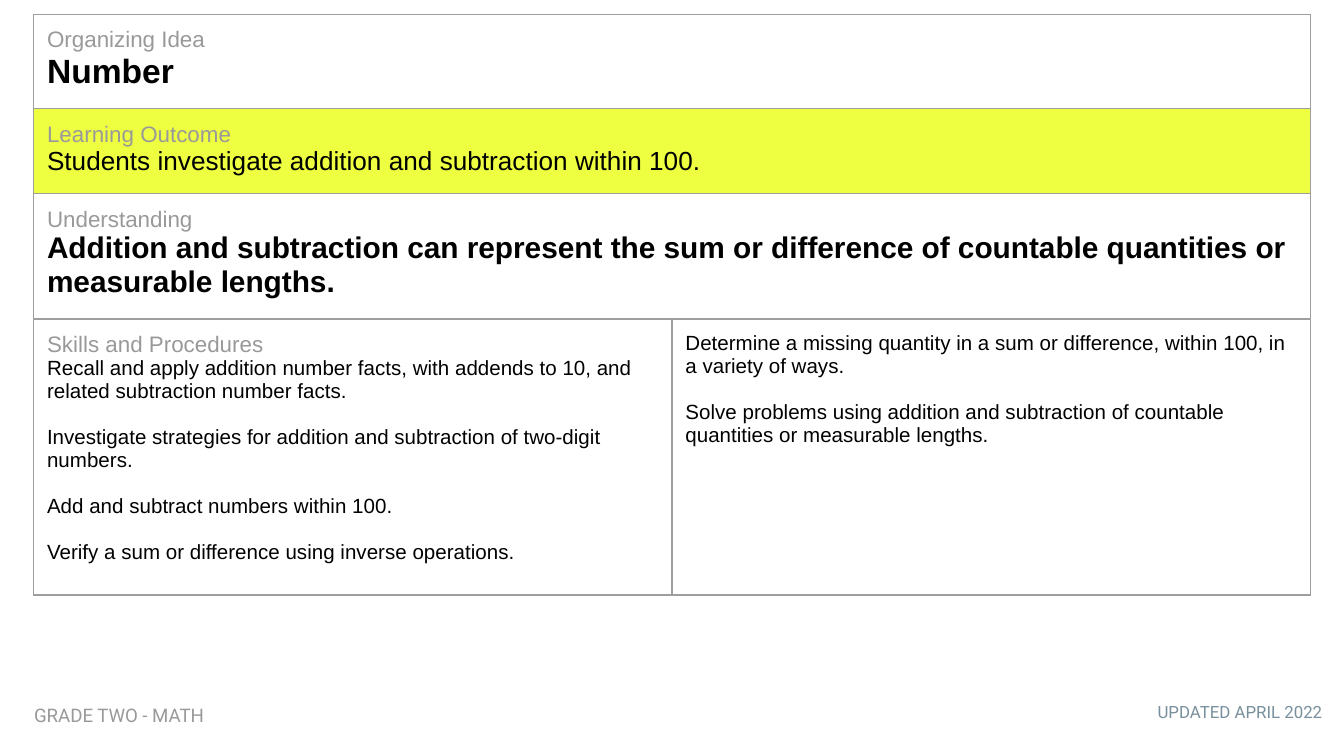
import lxml.etree
import pptx
import pptx.dml.color
import pptx.enum.text
import pptx.oxml.ns
import pptx.util

SCALE = 4572
GRAY, BLACK, LIME, SLATE, RULE = "999999", "000000", "EEFF41", "78909C", "9E9E9E"
LEFT = pptx.enum.text.PP_ALIGN.LEFT
RIGHT = pptx.enum.text.PP_ALIGN.RIGHT


def px(num):
    return pptx.util.Emu(num * SCALE)


def color(code):
    return pptx.dml.color.RGBColor.from_string(code)


class Page:
    """Hold the style and the current slide, and draw each kind of element."""

    def __init__(self, slide):
        self.slide = slide
        self.font = "Arial"
        self.foot = "Roboto"
        self.pad = px(20)

    def style(self, runs, face, size, tint, bold=False):
        for run in runs:
            run.font.name = face
            run.font.size = pptx.util.Pt(size)
            run.font.bold = bold
            run.font.color.rgb = color(tint)

    def inset(self, body):
        body.margin_left = body.margin_right = self.pad
        body.margin_top = body.margin_bottom = self.pad

    def label(self, text, box, size, tint, align=LEFT):
        frame = self.slide.shapes.add_textbox(*map(px, box)).text_frame
        frame.word_wrap = True
        self.inset(frame)
        frame.text = text
        para = frame.paragraphs[0]
        para.alignment = align
        self.style(para.runs, self.foot, size, tint)

    def border(self, cell):
        props = cell._tc.get_or_add_tcPr()
        name = pptx.oxml.ns.qn
        for spot, side in enumerate(("a:lnL", "a:lnR", "a:lnT", "a:lnB")):
            line = lxml.etree.Element(name(side), w=str(pptx.util.Pt(0.75)))
            fill = lxml.etree.SubElement(line, name("a:solidFill"))
            lxml.etree.SubElement(fill, name("a:srgbClr"), val=RULE)
            props.insert(spot, line)

    def grid(self, left, top, cols, rows):
        box = map(px, (left, top, sum(cols), sum(rows)))
        table = self.slide.shapes.add_table(len(rows), len(cols), *box).table
        table.first_row = table.horz_banding = False
        for col, width in zip(table.columns, cols):
            col.width = px(width)
        for row, height in zip(table.rows, rows):
            row.height = px(height)
        for cell in table.iter_cells():
            self.inset(cell)
            cell.fill.background()
            self.border(cell)
        return table

    def cell(self, cell, head, text, size, bold=False, gap=0):
        cell.text_frame.text = head + text
        paras = cell.text_frame.paragraphs
        runs = [run for para in paras for run in para.runs]
        self.style(runs, self.font, size, BLACK, bold)
        if head:
            self.style(runs[:1], self.font, 12, GRAY)
        for para in paras[2 if head else 1:]:
            para.space_before = pptx.util.Pt(gap)


def main():
    deck = pptx.Presentation()
    deck.slide_width, deck.slide_height = px(2000), px(1125)
    page = Page(deck.slides.add_slide(deck.slide_layouts[6]))

    page.label("UPDATED APRIL 2022", (1447, 1029, 540, 70), 9, SLATE, RIGHT)

    table = page.grid(50, 21, [950, 950], [140, 126, 186, 411])
    heads = [
        ("Organizing Idea\v", "Number", 18, True),
        ("Learning Outcome\v",
         "Students investigate addition and subtraction within 100.", 14, False),
        ("Understanding\n",
         "Addition and subtraction can represent the sum or difference of "
         "countable quantities or measurable lengths.", 16, True),
    ]
    for row, (head, text, size, bold) in enumerate(heads):
        table.cell(row, 0).merge(table.cell(row, 1))
        page.cell(table.cell(row, 0), head, text, size, bold)
    fill = table.cell(1, 0).fill
    fill.solid()
    fill.fore_color.rgb = color(LIME)

    skills = [
        ("Skills and Procedures\n", [
            "Recall and apply addition number facts, with addends to 10, and "
            "related subtraction number facts.",
            "Investigate strategies for addition and subtraction of two-digit "
            "numbers.",
            "Add and subtract numbers within 100.",
            "Verify a sum or difference using inverse operations.",
        ]),
        ("", [
            "Determine a missing quantity in a sum or difference, within 100, "
            "in a variety of ways.",
            "Solve problems using addition and subtraction of countable "
            "quantities or measurable lengths.",
        ]),
    ]
    for col, (head, lines) in enumerate(skills):
        page.cell(table.cell(3, col), head, "\n".join(lines), 11, gap=12.3)

    page.label("GRADE TWO - MATH", (31, 1031, 602, 74), 10, GRAY)
    deck.save("out.pptx")


if __name__ == "__main__":
    main()
